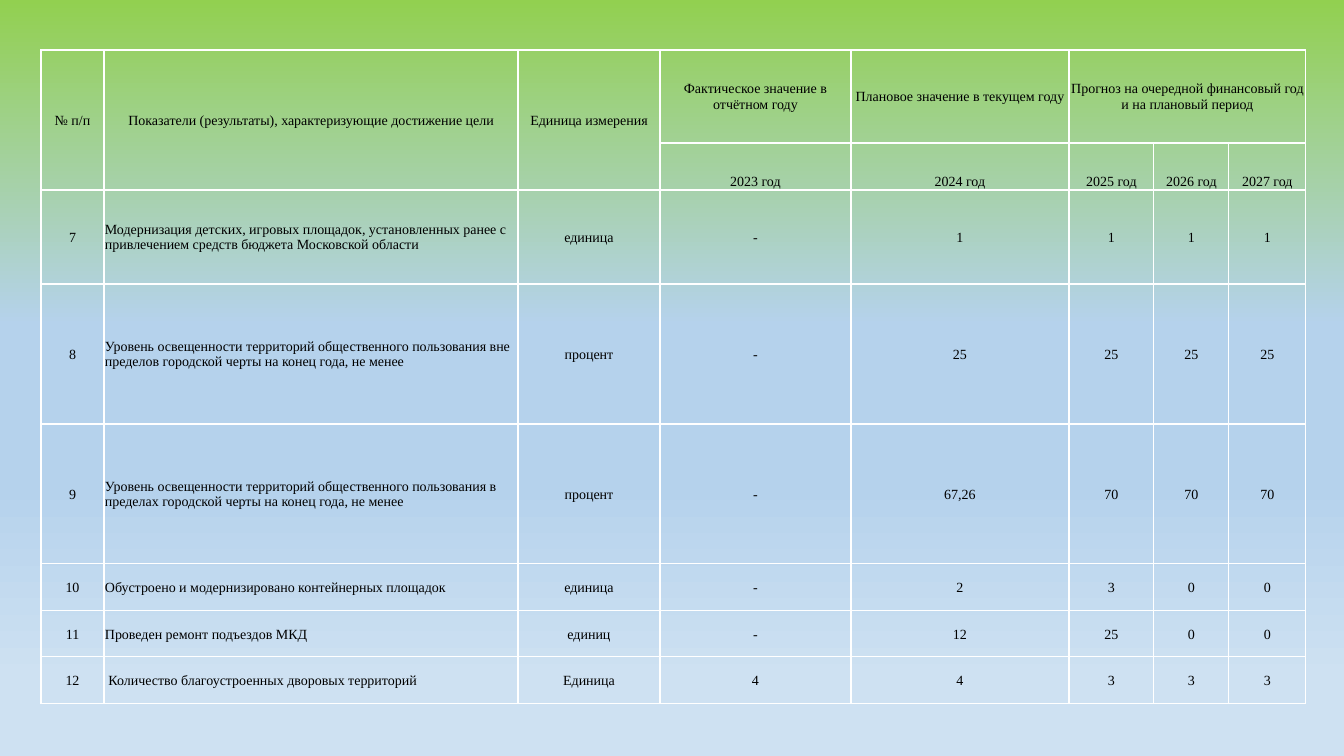
from lxml.etree import SubElement
from pptx import Presentation
from pptx.dml.color import RGBColor
from pptx.enum.text import MSO_VERTICAL_ANCHOR as Anchor, PP_ALIGN as Align
from pptx.oxml.ns import qn
from pptx.util import Emu, Pt

SCALE = 12192000 / 1344
FONT = "Times New Roman"
BACKGROUND = [(0, "92D050"), (43, "B5D2EC"), (64, "B5D2EC"), (90, "CEE1F2")]
COLUMN_WIDTHS = [63, 414, 142, 191, 218, 85, 75, 77]
ROW_HEIGHTS = [93, 47, 94, 140, 140, 47, 46, 47]
HEADER_ROWS = 2
NAME_COLUMN = 1
MERGES = [(0, 0, 1, 0), (0, 1, 1, 1), (0, 2, 1, 2), (0, 5, 0, 7)]
ROWS = [
    ["№ п/п", "Показатели (результаты), характеризующие достижение цели",
     "Единица измерения", "Фактическое значение в отчётном году",
     "Плановое значение в текущем году",
     "Прогноз на очередной финансовый год и на плановый период", "", ""],
    ["", "", "", "2023 год", "2024 год", "2025 год", "2026 год", "2027 год"],
    ["7", "Модернизация детских, игровых площадок, установленных ранее с "
     "привлечением средств бюджета Московской области",
     "единица", "-", "1", "1", "1", "1"],
    ["8", "Уровень освещенности территорий общественного пользования вне "
     "пределов городской черты на конец года, не менее",
     "процент", "-", "25", "25", "25", "25"],
    ["9", "Уровень освещенности территорий общественного пользования в "
     "пределах городской черты на конец года, не менее",
     "процент", "-", "67,26", "70", "70", "70"],
    ["10", "Обустроено и модернизировано контейнерных площадок",
     "единица", "-", "2", "3", "0", "0"],
    ["11", "Проведен ремонт подъездов МКД",
     "единиц", "-", "12", "25", "0", "0"],
    ["12", " Количество благоустроенных дворовых территорий",
     "Единица", "4", "4", "3", "3", "3"],
]


def px(length):
    """Turn pixels into EMU."""
    return Emu(round(length * SCALE))


def color(code):
    """Turn a hex string into a colour."""
    return RGBColor.from_string(code)


def paint_background(page, stops):
    """Fill the page with a top-to-bottom gradient."""
    fill = page.background.fill
    fill.gradient()
    fill.gradient_angle = 270
    stop_list = next(page.element.iter(qn("a:gsLst")))
    stop_list.clear()
    for percent, code in stops:
        stop = SubElement(stop_list, qn("a:gs"), pos=str(percent * 1000))
        SubElement(stop, qn("a:srgbClr"), val=code)


def draw_borders(cell, code, width):
    """Draw a solid line on all four sides of a cell."""
    properties = cell._tc.get_or_add_tcPr()
    for side in ("a:lnL", "a:lnR", "a:lnT", "a:lnB"):
        line = SubElement(properties, qn(side), w=str(Pt(width)))
        fill = SubElement(line, qn("a:solidFill"))
        SubElement(fill, qn("a:srgbClr"), val=code)


def fill_cell(cell, text, align, anchor):
    """Write and format one table cell."""
    draw_borders(cell, "FFFFFF", 1)
    cell.fill.background()
    cell.margin_left = cell.margin_right = cell.margin_top = px(1)
    cell.margin_bottom = 0
    cell.vertical_anchor = anchor
    cell.text_frame.text = text
    para = cell.text_frame.paragraphs[0]
    para.alignment = align
    para.font.size = Pt(10)
    for span in para.runs:
        span.font.name = FONT
        span.font.size = Pt(10)
        span.font.color.rgb = color("000000")


def add_indicator_table(page, left, top):
    """Add the table of indicators with its merged header."""
    frame = page.shapes.add_table(
        len(ROWS), len(COLUMN_WIDTHS), px(left), px(top),
        px(sum(COLUMN_WIDTHS)), px(sum(ROW_HEIGHTS)))
    table = frame.table
    table.first_row = table.horz_banding = False
    for column, width in zip(table.columns, COLUMN_WIDTHS):
        column.width = px(width)
    for row, height in zip(table.rows, ROW_HEIGHTS):
        row.height = px(height)
    for i, texts in enumerate(ROWS):
        anchor = Anchor.BOTTOM if i == 1 else Anchor.MIDDLE
        for j, text in enumerate(texts):
            is_name = i >= HEADER_ROWS and j == NAME_COLUMN
            align = Align.LEFT if is_name else Align.CENTER
            fill_cell(table.cell(i, j), text, align, anchor)
    for first_row, first_column, last_row, last_column in MERGES:
        table.cell(first_row, first_column).merge(
            table.cell(last_row, last_column))


def main():
    """Build the slide and save it."""
    deck = Presentation()
    deck.slide_width, deck.slide_height = px(1344), px(756)
    page = deck.slides.add_slide(deck.slide_layouts[6])
    paint_background(page, BACKGROUND)
    add_indicator_table(page, 41, 50)
    deck.save("out.pptx")


if __name__ == "__main__":
    main()
